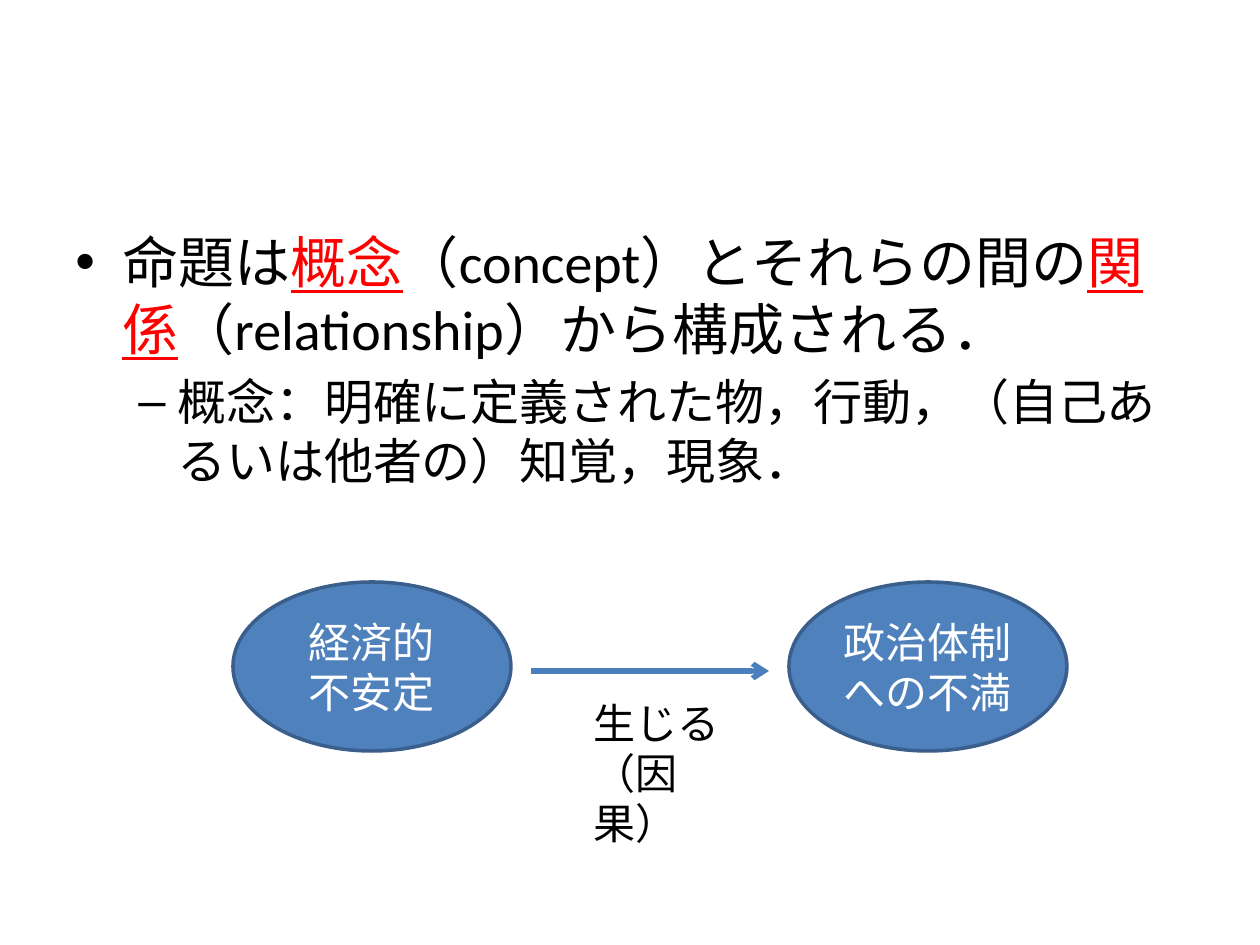
from lxml.etree import SubElement
from pptx import Presentation
from pptx.dml.color import RGBColor
from pptx.enum.shapes import MSO_CONNECTOR, MSO_SHAPE
from pptx.enum.text import MSO_ANCHOR, PP_ALIGN
from pptx.oxml.ns import qn
from pptx.util import Pt

PX = 914400 / 126
COLORS = {
    "text": "000000",
    "term": "FF0000",
    "concept": "4F81BD",
    "outline": "3A5F8C",
    "arrow": "4B7EBC",
    "concept_text": "FFFFFF",
}


def px(*lengths):
    return [round(length * PX) for length in lengths]


def set_font(paragraph, size, color):
    paragraph.font.name = "Calibri"
    paragraph.font.size = Pt(size)
    paragraph.font.color.rgb = RGBColor.from_string(COLORS[color])


presentation = Presentation()
presentation.slide_width, presentation.slide_height = px(1260, 945)
slide = presentation.slides.add_slide(presentation.slide_layouts[6])

body = slide.shapes.add_textbox(*px(63, 221, 1134, 624)).text_frame
body.word_wrap = True
points = [
    (0, "•", 32, 47, 47, [
        ("命題は", False),
        ("概念", True),
        ("（concept）とそれらの間の", False),
        ("関係", True),
        ("（relationship）から構成される．", False),
    ]),
    (1, "–", 28, 102, 39, [
        ("概念：明確に定義された物，行動，（自己あるいは他者の）知覚，現象．", False),
    ]),
]
for level, bullet, size, margin, hanging, pieces in points:
    point = body.add_paragraph() if level else body.paragraphs[0]
    point.level = level
    point.space_before = Pt(size * 0.2)
    set_font(point, size, "text")
    properties = point.font._element.getparent()
    left, indent = px(margin, -hanging)
    properties.set("marL", str(left))
    properties.set("indent", str(indent))
    bullet_font = properties.makeelement(qn("a:buFont"), {"typeface": "Arial"})
    bullet_char = properties.makeelement(qn("a:buChar"), {"char": bullet})
    point.font._element.addprevious(bullet_font)
    point.font._element.addprevious(bullet_char)
    for wording, is_term in pieces:
        run = point.add_run()
        run.text = wording
        if is_term:
            run.font.underline = True
            run.font.color.rgb = RGBColor.from_string(COLORS["term"])

concepts = [(233, ["経済的", "不安定"]), (789, ["政治体制への不満"])]
for left, lines in concepts:
    concept = slide.shapes.add_shape(MSO_SHAPE.OVAL, *px(left, 582, 278, 169))
    concept.shadow.inherit = False
    concept.fill.solid()
    concept.fill.fore_color.rgb = RGBColor.from_string(COLORS["concept"])
    concept.line.color.rgb = RGBColor.from_string(COLORS["outline"])
    concept.line.width = Pt(2)
    concept.text_frame.word_wrap = True
    concept.text_frame.vertical_anchor = MSO_ANCHOR.MIDDLE
    concept.text_frame.text = "\n".join(lines)
    for paragraph in concept.text_frame.paragraphs:
        paragraph.alignment = PP_ALIGN.CENTER
        set_font(paragraph, 24, "concept_text")

causation = slide.shapes.add_connector(MSO_CONNECTOR.STRAIGHT, *px(531, 671, 769, 671))
causation.line.color.rgb = RGBColor.from_string(COLORS["arrow"])
causation.line.width = Pt(3)
SubElement(causation.line._get_or_add_ln(), qn("a:tailEnd"), type="arrow")
SubElement(causation._element.spPr, qn("a:effectLst"))

relation = slide.shapes.add_textbox(*px(581, 691, 152, 115)).text_frame
relation.word_wrap = True
relation.text = "生じる\n（因果）"
for paragraph in relation.paragraphs:
    set_font(paragraph, 24, "text")

presentation.save("out.pptx")
